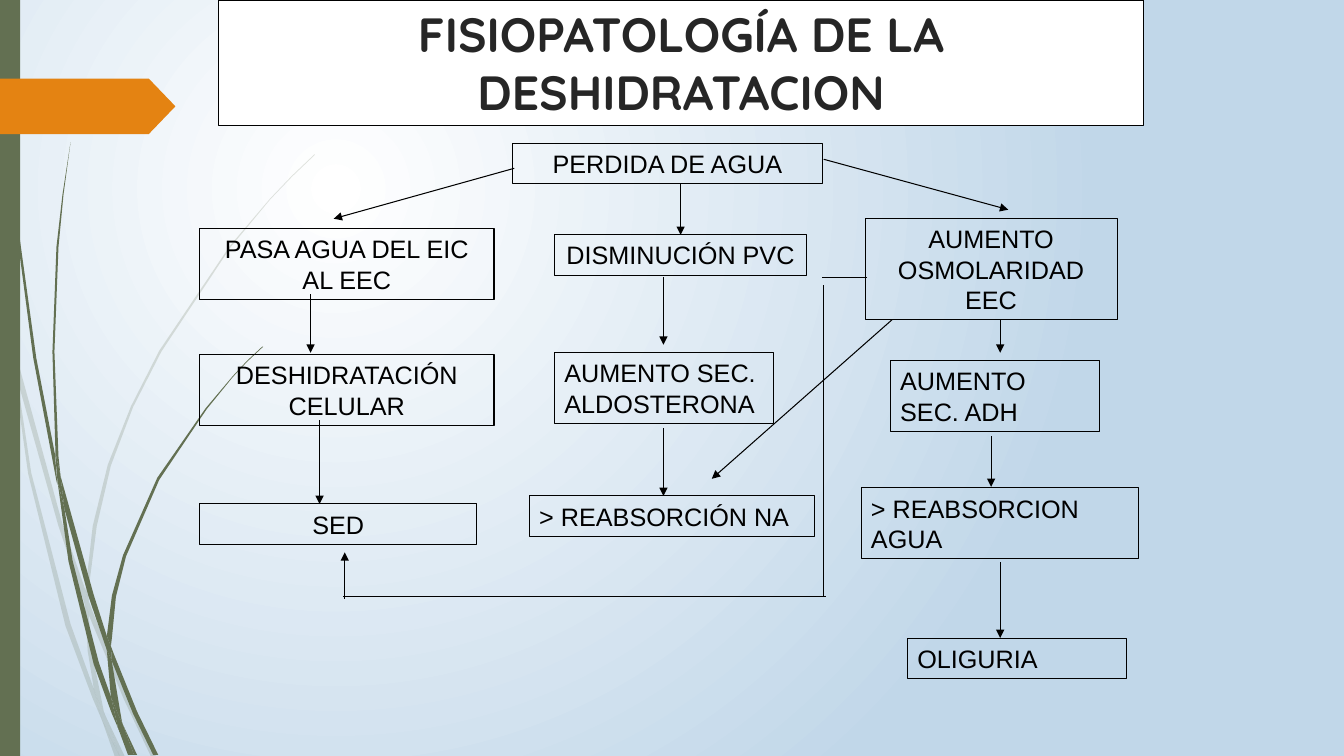
import pptx
import pptx.util
import pptx.dml.color
import pptx.enum.shapes
import pptx.enum.text
import pptx.oxml
import pptx.oxml.ns

Inches, Pt = pptx.util.Inches, pptx.util.Pt
Kind = pptx.enum.shapes.MSO_SHAPE
Align = pptx.enum.text.PP_ALIGN
Fit = pptx.enum.text.MSO_AUTO_SIZE
qn, nsdecls = pptx.oxml.ns.qn, pptx.oxml.ns.nsdecls

HUES = {"ink": "000000", "title": "262626", "paper": "FFFFFF",
        "sky": "C1D7E9", "moss": "637052", "flame": "E48312"}
BODY = {"name": "Arial", "size": Pt(18)}
HEAD = {"name": "Quicksand", "size": Pt(34.3), "bold": True}

# Corners (x, y) of each piece of grass
PALE = [
    [(0.11, 3.5), (0.09, 3.22), (0, 2.82), (0, 2.99), (0.1, 3.44)],
    [(0.58, 5.22), (0.84, 5.99), (0.85, 5.86), (0.62, 5.2), (0.14, 3.45),
     (0.17, 3.76)],
    [(0.92, 6.07), (0.88, 5.96), (0.88, 6.1), (1.23, 6.94), (1.5, 7.51),
     (1.55, 7.51), (1.27, 6.92)],
    [(1.19, 7.51), (1.24, 7.51), (1.05, 7.11)],
    [(0.93, 6.83), (0.7, 6.19), (0.31, 4.69), (0.17, 3.76), (0.11, 3.5),
     (0.28, 4.7), (0.65, 6.21), (0.92, 6.93), (1.01, 7.14), (0.99, 7.07)],
    [(0.84, 5.99), (0.87, 6.46), (0.93, 6.83), (0.96, 6.92), (1.05, 7.11),
     (1.03, 7.06), (0.91, 6.46), (0.88, 6.1), (0.88, 6.08)],
    [(0.88, 5.84), (0.96, 5.22), (1.1, 4.62), (1.32, 4.04), (1.6, 3.49),
     (2.29, 2.45), (2.68, 1.98), (2.9, 1.75), (3.12, 1.54), (3.12, 1.53),
     (2.89, 1.75), (2.68, 1.97), (2.28, 2.44), (1.58, 3.48), (1.3, 4.03),
     (1.07, 4.61), (0.92, 5.22), (0.85, 5.84), (0.85, 5.86), (0.88, 5.96)],
    [(1.01, 7.14), (1.14, 7.51), (1.19, 7.51)],
    [(0.88, 6.08), (0.88, 6.1), (0.88, 5.96), (0.85, 5.86), (0.84, 5.99)],
    [(0.96, 6.92), (0.93, 6.83), (0.99, 7.07), (1.01, 7.14), (1.19, 7.51),
     (1.05, 7.11)],
]
DARK = [
    [(0.07, 1.1), (0.17, 2.33), (0.33, 3.55), (0.56, 4.77), (0.57, 4.81),
     (0.55, 4.57), (0.55, 4.53), (0.36, 3.55), (0.19, 2.32), (0.08, 1.09),
     (0.05, 0.48), (0.04, 0), (0.03, 0), (0.04, 0.48)],
    [(0.88, 5.92), (1.06, 6.45), (1.06, 6.33), (1.06, 6.31), (0.93, 5.9),
     (0.6, 4.72), (0.64, 5.05)],
    [(1.13, 6.49), (1.1, 6.41), (1.11, 6.56), (1.32, 7.08), (1.52, 7.49),
     (1.57, 7.49), (1.36, 7.06)],
    [(1.1, 6.91), (0.98, 6.57), (0.72, 5.56), (0.64, 5.05), (0.57, 4.77),
     (0.68, 5.57), (0.93, 6.59), (1.11, 7.08), (1.17, 7.22), (1.16, 7.17)],
    [(0.6, 4.72), (0.58, 4.53), (0.54, 3.49), (0.58, 2.45), (0.63, 1.93),
     (0.7, 1.41), (0.62, 1.93), (0.56, 2.45), (0.52, 3.49), (0.55, 4.49)],
    [(1.33, 7.49), (1.36, 7.49), (1.22, 7.19)],
    [(0.57, 4.77), (0.64, 5.05), (0.6, 4.72), (0.55, 4.49), (0.55, 4.53)],
    [(1.11, 6.33), (1.15, 5.92), (1.25, 5.52), (1.58, 4.76), (2.05, 4.06),
     (2.31, 3.74), (2.45, 3.59), (2.61, 3.44), (2.6, 3.44), (2.45, 3.58),
     (2.31, 3.73), (2.04, 4.05), (1.56, 4.74), (1.22, 5.51), (1.11, 5.91),
     (1.06, 6.31), (1.1, 6.41)],
    [(1.17, 7.22), (1.27, 7.49), (1.31, 7.49)],
    [(1.06, 6.45), (1.1, 6.91), (1.16, 7.06), (1.22, 7.19), (1.21, 7.16),
     (1.11, 6.56), (1.09, 6.51)],
    [(1.06, 6.45), (1.09, 6.51), (1.11, 6.56), (1.1, 6.41), (1.06, 6.31)],
    [(1.16, 7.06), (1.1, 6.91), (1.16, 7.17), (1.17, 7.22), (1.3, 7.49),
     (1.33, 7.49), (1.22, 7.19)],
]

# Text, left, top, width, height
CENTRED = [
    ("PERDIDA DE AGUA", 5.08, 1.42, 3.08, 0.4),
    ("PASA AGUA DEL EIC AL EEC", 1.98, 2.27, 2.92, 0.7),
    ("DISMINUCIÓN PVC", 5.5, 2.33, 2.5, 0.4),
    ("AUMENTO OSMOLARIDAD EEC", 8.58, 2.17, 2.5, 1),
    ("DESHIDRATACIÓN CELULAR", 1.98, 3.52, 2.92, 0.7),
    ("SED", 1.98, 5, 2.75, 0.4),
]
LEFT = [
    ("AUMENTO SEC. ALDOSTERONA", 5.5, 3.5, 2.17, 0.7),
    ("> REABSORCIÓN NA", 5.25, 4.92, 2.83, 0.4),
    ("AUMENTO SEC. ADH", 8.83, 3.58, 2.08, 0.7),
    ("> REABSORCION AGUA", 8.54, 4.84, 2.75, 0.7),
    ("OLIGURIA", 9, 6.33, 2.17, 0.4),
]
# From x, from y, to x, to y
ARROWS = [
    (5.1, 1.67, 3.31, 2.17), (8.17, 1.58, 10, 2.08),
    (3.08, 2.92, 3.08, 3.5), (3.17, 4.17, 3.17, 5),
    (6.58, 2.75, 6.58, 3.42), (6.58, 4.25, 6.58, 4.92),
    (9.92, 3.17, 9.92, 3.5), (9.83, 4.33, 9.83, 4.83),
    (9.92, 5.58, 9.92, 6.33), (8.85, 3.17, 7.06, 4.75),
    (3.42, 5.94, 3.42, 5.48),
]
PLAIN = [(8.6, 2.75, 8.15, 2.75), (8.17, 2.83, 8.17, 5.92),
         (8.19, 5.92, 3.4, 5.92)]


def tint(name):
    return pptx.dml.color.RGBColor.from_string(HUES[name])


def apply(item, values):
    for key, value in values.items():
        setattr(item, key, value)


class Board:
    """Holds the line style and the current slide."""

    def __init__(self, slide, weight=0.75):
        self.slide, self.weight = slide, Pt(weight)

    def glow(self):
        """Background that fades outward from the upper left."""
        fill = self.slide.background.fill
        fill.gradient()
        for stop, name, place in zip(fill.gradient_stops, ("paper", "sky"), (0, 1)):
            stop.color.rgb, stop.position = tint(name), place
        grad = self.slide.element.find(".//" + qn("a:gradFill"))
        grad.remove(grad.find(qn("a:lin")))
        grad.append(pptx.oxml.parse_xml(
            f'<a:path {nsdecls("a")} path="circle">'
            '<a:fillToRect l="50000" t="50000" r="100000" b="100000"/></a:path>'))

    def paint(self, shape, fill=None, edge=False):
        shape.shadow.inherit = False
        if fill:
            shape.fill.solid()
            shape.fill.fore_color.rgb = tint(fill)
        else:
            shape.fill.background()
        if edge:
            shape.line.color.rgb = tint("ink")
            shape.line.width = self.weight
        else:
            shape.line.fill.background()

    def blade(self, corners, alpha=100):
        points = [(Inches(x), Inches(y)) for x, y in corners]
        form = self.slide.shapes.build_freeform(*points[0])
        form.add_line_segments(points[1:], close=True)
        shape = form.convert_to_shape()
        self.paint(shape, "moss")
        if alpha < 100:
            shape.element.spPr.find(".//" + qn("a:srgbClr")).append(
                pptx.oxml.parse_xml(
                    f'<a:alpha {nsdecls("a")} val="{alpha * 1000}"/>'))

    def block(self, kind, place, fill=None, edge=False):
        shape = self.slide.shapes.add_shape(kind, *map(Inches, place))
        self.paint(shape, fill, edge)
        return shape

    def box(self, text, place, align, font=BODY, hue="ink", fill=None,
            fit=Fit.SHAPE_TO_FIT_TEXT):
        shape = self.block(Kind.RECTANGLE, place, fill, True)
        apply(shape.text_frame, {
            "word_wrap": True, "auto_size": fit,
            "vertical_anchor": pptx.enum.text.MSO_ANCHOR.TOP})
        para = shape.text_frame.paragraphs[0]
        para.alignment = align
        run = para.add_run()
        run.text = text
        apply(run.font, font)
        run.font.color.rgb = tint(hue)
        return shape

    def line(self, ends, arrow=True):
        link = self.slide.shapes.add_connector(
            pptx.enum.shapes.MSO_CONNECTOR.STRAIGHT, *map(Inches, ends))
        link.line.color.rgb = tint("ink")
        link.line.width = self.weight
        if arrow:
            link.element.spPr.find(qn("a:ln")).append(pptx.oxml.parse_xml(
                f'<a:tailEnd {nsdecls("a")} type="triangle"/>'))
        link.element.spPr.append(
            pptx.oxml.parse_xml(f'<a:effectLst {nsdecls("a")}/>'))
        return link


def main():
    deck = pptx.Presentation()
    apply(deck, {"slide_width": Inches(13.33), "slide_height": Inches(7.5)})
    board = Board(deck.slides.add_slide(deck.slide_layouts[6]))
    board.glow()
    for group, alpha in ((PALE, 20), (DARK, 100)):
        for corners in group:
            board.blade(corners, alpha)
    board.block(Kind.RECTANGLE, (0, 0, 0.2, 7.5), "moss")
    flag = board.block(Kind.PENTAGON, (0, 0.78, 1.74, 0.55), "flame")
    flag.adjustments[0] = 0.48
    board.box("FISIOPATOLOGÍA DE LA DESHIDRATACION", (2.17, 0, 9.17, 1.25),
              Align.CENTER, HEAD, "title", "paper", Fit.NONE)
    boxes = {}
    for align, group in ((Align.CENTER, CENTRED), (Align.LEFT, LEFT)):
        for text, *place in group:
            boxes[text] = board.box(text, place, align)
    drop = board.line((6.75, 1.83, 6.75, 2.33))
    drop.end_connect(boxes["DISMINUCIÓN PVC"], 0)
    for ends in ARROWS:
        board.line(ends)
    for ends in PLAIN:
        board.line(ends, arrow=False)
    deck.save("out.pptx")


if __name__ == "__main__":
    main()
